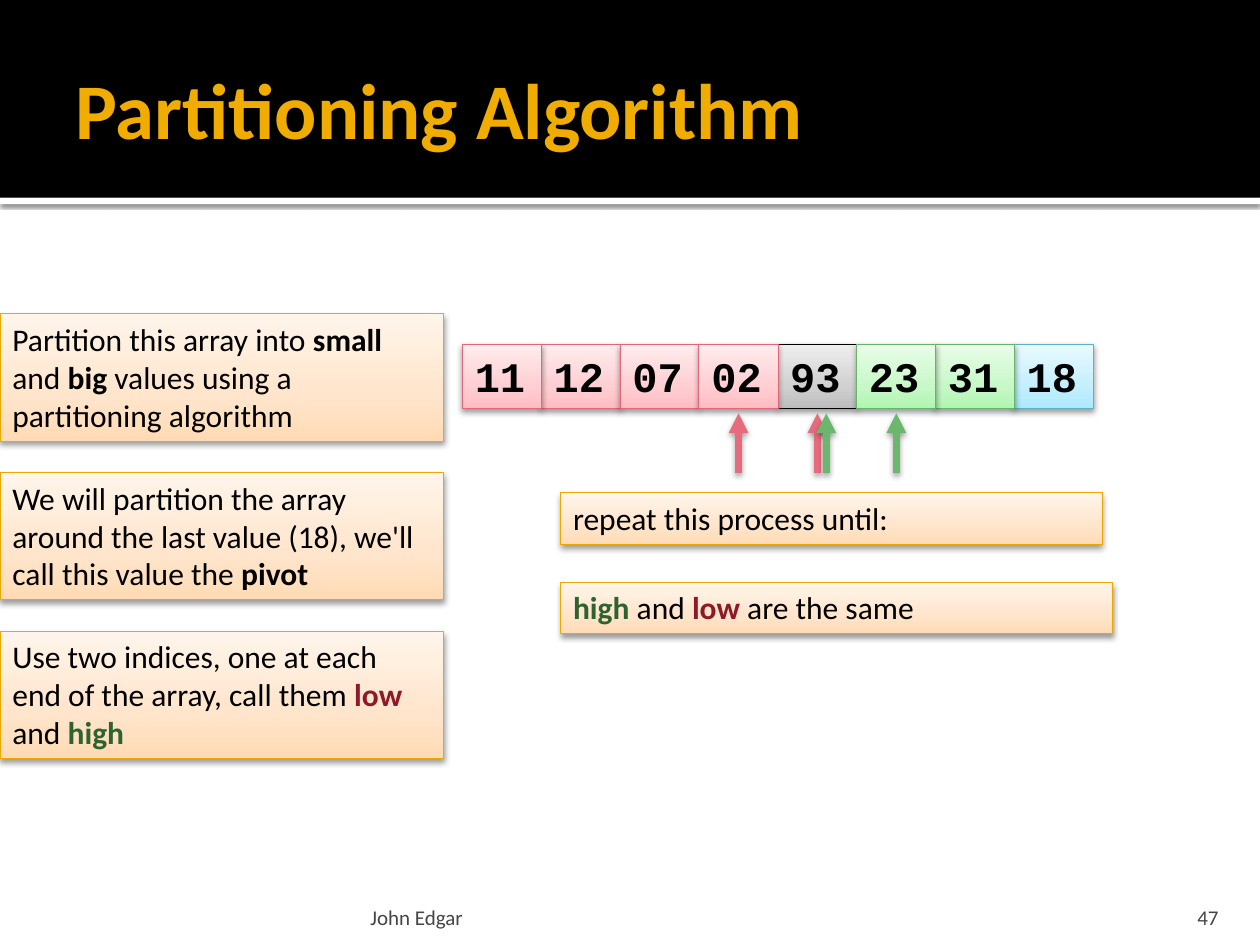
from lxml.etree import SubElement
from pptx import Presentation
from pptx.dml.color import RGBColor
from pptx.enum.shapes import MSO_CONNECTOR, MSO_SHAPE
from pptx.enum.text import MSO_ANCHOR as Anchor, MSO_AUTO_SIZE as AutoSize, PP_ALIGN as Align
from pptx.oxml import parse_xml
from pptx.oxml.ns import nsdecls, qn
from pptx.util import Inches, Pt

# Each theme: gradient colours from bottom to top, then the outline
RED = ("FFBCC2", "FFCFD3", "FFEDEE", "E46778")
GREEN = ("B0F6B1", "C8F8C8", "E9FDE9", "67B569")
GREY = ("BDBDBD", "D1D1D1", "EEEEEE", "000000")
BLUE = ("ADE9FF", "C5EFFF", "E9F9FF", "5BB3CA")
ORANGE = ("FFDBB5", "FFE5CB", "FFF5EB", "EBA900")
STOPS = (0, 35, 100)

LOW_ARROW, HIGH_ARROW = "E66C7D", "6BB76D"
LOW, HIGH = ("low", "901929"), ("high", "2F6231")

ARRAY = [("11", RED), ("12", RED), ("07", RED), ("02", RED),
         ("93", GREY), ("23", GREEN), ("31", GREEN), ("18", BLUE)]
DRAW_ORDER = (1, 2, 4, 7, 6, 5, 3, 0)
ARRAY_LEFT, ARRAY_TOP = 3.67, 2.73
CELL_WIDTH, CELL_HEIGHT = 0.63, 0.51
CELL_STEP = (8.05 - ARRAY_LEFT) / (len(ARRAY) - 1)


def color(hex_text):
    return RGBColor.from_string(hex_text)


def add_shadow(shape, opacity=38, blur=3.5, distance=2):
    effects = SubElement(shape._element.spPr, qn("a:effectLst"))
    effects.append(parse_xml(
        f'<a:outerShdw {nsdecls("a")} blurRad="{Pt(blur)}" dist="{Pt(distance)}" '
        f'dir="5400000" rotWithShape="0"><a:srgbClr val="000000">'
        f'<a:alpha val="{opacity * 1000}"/></a:srgbClr></a:outerShdw>'))


def fill_gradient(shape, colors):
    shape.fill.gradient()
    shape.fill.gradient_angle = 90
    stop_list = shape._element.spPr.find(qn("a:gradFill")).find(qn("a:gsLst"))
    stop_list.clear()
    for position, hex_text in zip(STOPS, colors):
        stop = SubElement(stop_list, qn("a:gs"), pos=str(position * 1000))
        SubElement(stop, qn("a:srgbClr"), val=hex_text)


def write_text(shape, runs, size=18, font="Calibri", text_color="000000", bold=False,
               align=Align.LEFT, anchor=Anchor.TOP, insets=(0.1, 0.05, 0.1, 0.05),
               auto_size=AutoSize.NONE, percent_before=0):
    """Write runs; a tuple (text, colour) is a bold run in that colour."""
    frame = shape.text_frame
    frame.word_wrap = True
    frame.auto_size = auto_size
    frame.vertical_anchor = anchor
    (frame.margin_left, frame.margin_top,
     frame.margin_right, frame.margin_bottom) = map(Inches, insets)
    paragraph = frame.paragraphs[0]
    paragraph.alignment = align
    if percent_before:
        spacing = SubElement(paragraph._p.get_or_add_pPr(), qn("a:spcBef"))
        SubElement(spacing, qn("a:spcPct"), val=str(percent_before * 1000))
    for item in runs:
        text, run_color, run_bold = (item, text_color, bold) if isinstance(item, str) else (*item, True)
        run = paragraph.add_run()
        run.text = text
        run.font.name, run.font.size, run.font.bold = font, Pt(size), run_bold
        run.font.color.rgb = color(run_color)


def add_band(slide, top, height, fill):
    band = slide.shapes.add_shape(MSO_SHAPE.RECTANGLE, 0, Inches(top), Inches(10), Inches(height))
    band.fill.solid()
    band.fill.fore_color.rgb = color(fill)
    band.line.fill.background()
    return band


def add_box(slide, left, top, width, height, runs, theme=ORANGE, **text_format):
    box = slide.shapes.add_shape(MSO_SHAPE.RECTANGLE, *map(Inches, (left, top, width, height)))
    fill_gradient(box, theme[:3])
    box.line.color.rgb = color(theme[3])
    box.line.width = Pt(0.5)
    add_shadow(box)
    write_text(box, runs, auto_size=AutoSize.SHAPE_TO_FIT_TEXT, **text_format)


def add_index_arrow(slide, cell, line_color, shift=0):
    x = Inches(ARRAY_LEFT + cell * CELL_STEP + CELL_WIDTH / 2 + shift)
    arrow = slide.shapes.add_connector(MSO_CONNECTOR.STRAIGHT, x, Inches(3.75), x, Inches(3.28))
    arrow.line.color.rgb = color(line_color)
    arrow.line.width = Pt(3.78)
    SubElement(arrow.line._get_or_add_ln(), qn("a:tailEnd"), type="triangle")
    add_shadow(arrow)


def add_footer(slide, left, width, text, side_inset, align):
    box = slide.shapes.add_textbox(*map(Inches, (left, 7.08, width, 0.3)))
    write_text(box, [text], size=12, text_color="454545", align=align, anchor=Anchor.BOTTOM,
               insets=(side_inset, 0.05, side_inset, 0))


def add_header(slide):
    add_shadow(add_band(slide, 1.57, 0.05, "FFFFFF"), opacity=60, blur=2.5, distance=0.8)
    black_band = add_band(slide, 0, 1.57, "000000")
    black_band.shadow.inherit = False
    title = slide.shapes.title
    title.left, title.top, title.width, title.height = map(Inches, (0.5, 0.17, 9, 1.37))
    write_text(title, ["Partitioning Algorithm"], size=45, text_color="F0AD00", bold=True,
               anchor=Anchor.MIDDLE, insets=(0.1, 0.05, 0.05, 0.05))
    black_band._element.addnext(title._element)  # title in front of the bands


def main():
    presentation = Presentation()
    presentation.slide_width, presentation.slide_height = Inches(10), Inches(7.5)
    slide = presentation.slides.add_slide(presentation.slide_layouts[5])

    add_header(slide)
    add_footer(slide, 2.89, 6.02, "John Edgar", 0.05, Align.LEFT)
    add_footer(slide, 8.97, 0.8, "47", 0.1, Align.RIGHT)

    # Array cells
    for index in DRAW_ORDER:
        value, theme = ARRAY[index]
        add_box(slide, ARRAY_LEFT + index * CELL_STEP, ARRAY_TOP, CELL_WIDTH, CELL_HEIGHT, [value],
                theme, size=24, font="Courier New", bold=True, percent_before=50)

    # Loop condition
    add_box(slide, 4.45, 3.91, 4.3, 0.41, ["repeat this process until:"])
    add_box(slide, 4.45, 4.62, 4.38, 0.41, [HIGH, " and ", LOW, " are the same"])

    # Positions of the low and high indices
    add_index_arrow(slide, 5, HIGH_ARROW)
    add_index_arrow(slide, 3, LOW_ARROW)
    add_index_arrow(slide, 4, LOW_ARROW)
    add_index_arrow(slide, 4, HIGH_ARROW, shift=0.07)

    # Explanations
    explanations = [
        ["Partition this array into ", ("small", "000000"), " and ", ("big", "000000"),
         " values using a partitioning algorithm"],
        ["We will partition the array around the last value (18), we'll call this value the ",
         ("pivot", "000000")],
        ["Use two indices, one at each end of the array, call them ", LOW, " and ", HIGH],
    ]
    for row, runs in enumerate(explanations):
        add_box(slide, 0, 2.49 + row * 1.26, 3.52, 1.01, runs)

    presentation.save("out.pptx")


if __name__ == "__main__":
    main()
